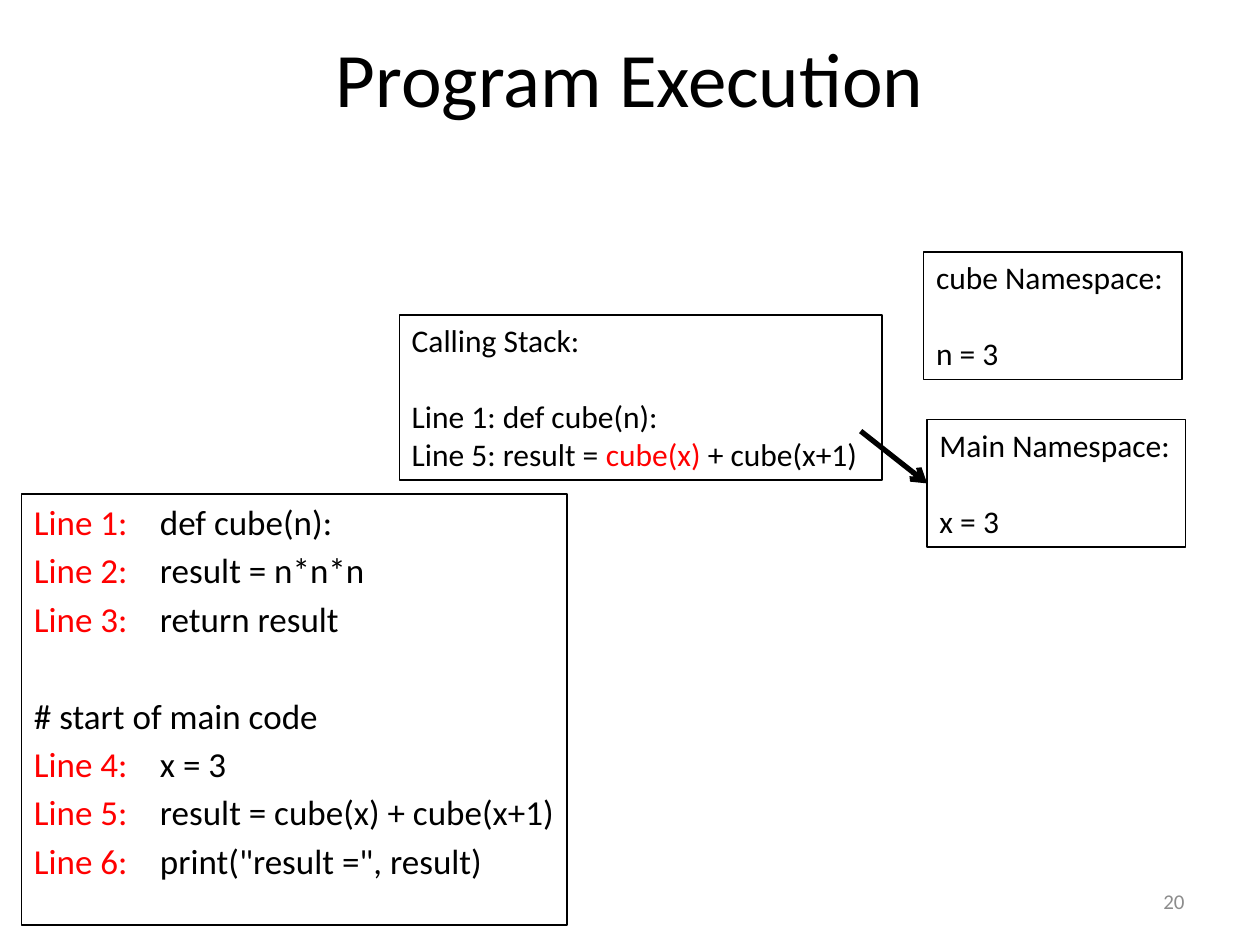
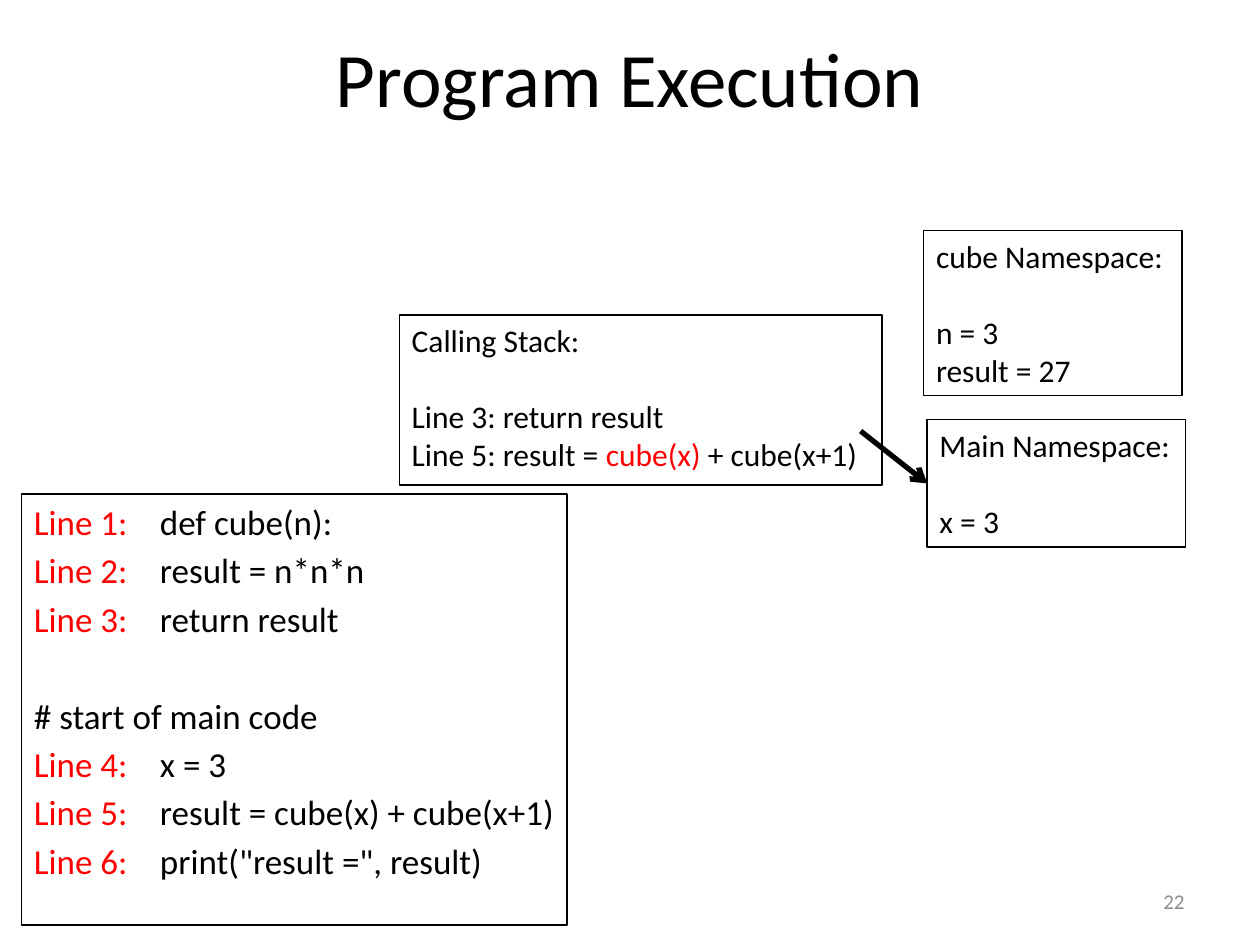
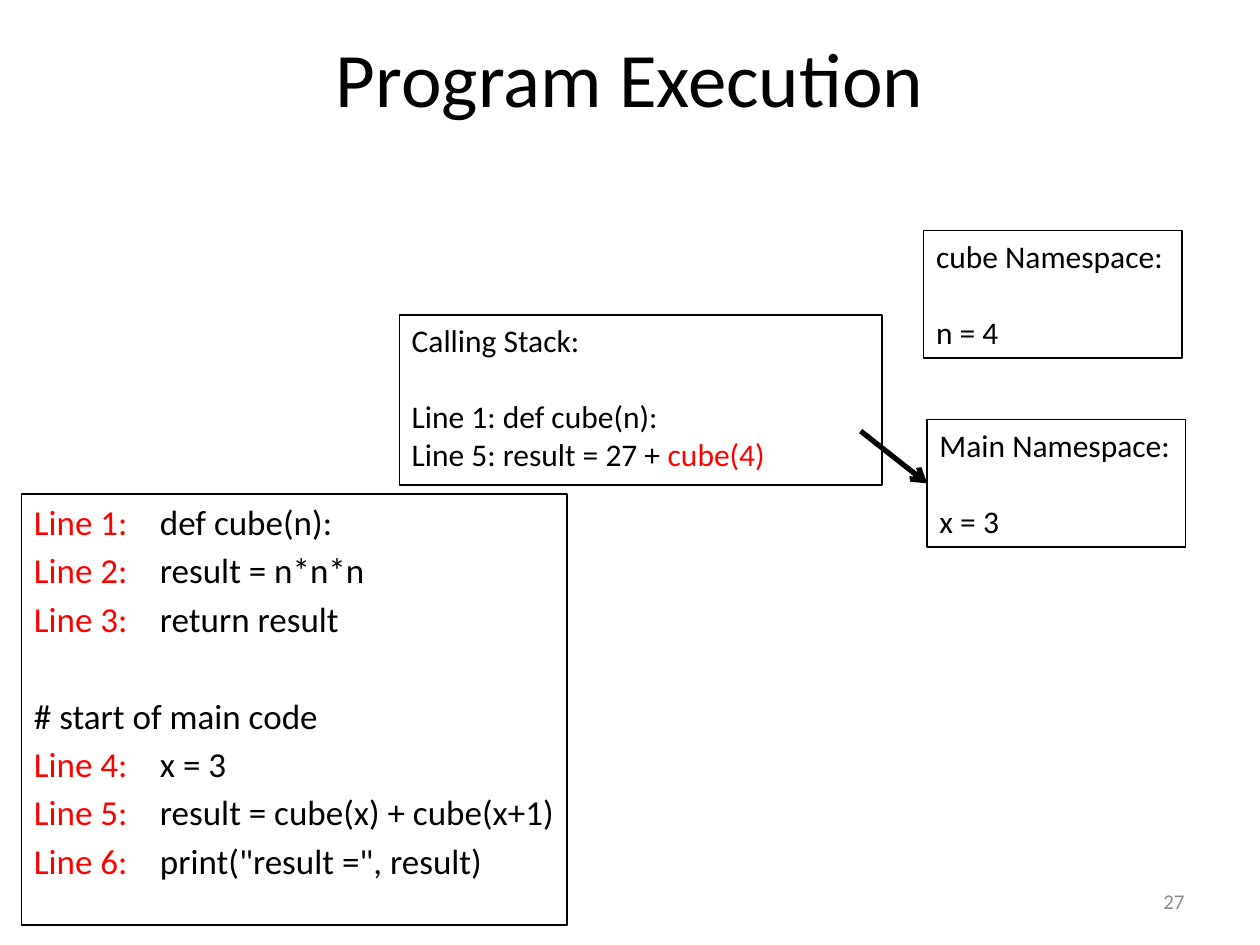
"""Build three slides that trace a small program's calling stack and namespaces."""
from dataclasses import dataclass

from lxml.etree import SubElement
from pptx import Presentation
from pptx.dml.color import RGBColor
from pptx.enum.shapes import MSO_CONNECTOR
from pptx.enum.text import MSO_ANCHOR, MSO_AUTO_SIZE, PP_ALIGN
from pptx.oxml.ns import qn
from pptx.shapes.autoshape import Shape
from pptx.slide import Slide
from pptx.text.text import TextFrame, _Paragraph as Paragraph
from pptx.util import Cm, Length, Pt

BLACK = RGBColor(0x00, 0x00, 0x00)
RED = RGBColor(0xFF, 0x00, 0x00)
GREY = RGBColor(0x8C, 0x8C, 0x8C)
FONT = "Calibri"
TITLE = "Program Execution"
LEFT_ALIGN = PP_ALIGN.LEFT
LINE_GAP = Pt(3.6)
CODE_BREAK = Pt(31.6)
BOX_BREAK = Pt(22)
CODE_TAB = Cm(2.36)
NESTED_TAB = Cm(2.84)


@dataclass(frozen=True)
class Span:
    """A piece of text in one colour."""
    text: str
    color: RGBColor = BLACK


@dataclass(frozen=True)
class CodeLine:
    """A line of the program, with its label and the tab stop of its code."""
    label: str
    code: str
    tab: Length = CODE_TAB
    before: Length = LINE_GAP


@dataclass(frozen=True)
class Area:
    """A rectangle on the page, in centimetres."""
    left: float
    top: float
    width: float
    height: float

    def lengths(self) -> tuple[Length, Length, Length, Length]:
        """Return the four measures as lengths."""
        return Cm(self.left), Cm(self.top), Cm(self.width), Cm(self.height)


@dataclass(frozen=True)
class Step:
    """The state of the program that one slide shows."""
    number: str
    stack: list[list[Span]]
    stack_height: float
    cube: list[list[Span]]
    cube_top: float
    cube_height: float


TITLE_AREA = Area(1.27, 0.43, 22.86, 2.24)
CODE_AREA = Area(0.43, 9.96, 11, 8.69)
NUMBER_AREA = Area(18.21, 17.65, 5.92, 1.02)
MAIN_AREA = Area(18.69, 8.46, 5.21, 2.57)

PROGRAM = [
    CodeLine("Line 1:", "def cube(n):"),
    CodeLine("Line 2:", "result = n*n*n", NESTED_TAB),
    CodeLine("Line 3:", "return result", NESTED_TAB),
    CodeLine("", "# start of main code", before=CODE_BREAK),
    CodeLine("Line 4:", "x = 3"),
    CodeLine("Line 5:", "result = cube(x) + cube(x+1)"),
    CodeLine("Line 6:", 'print("result =", result)'),
]

DEFINITION = [Span("Line 1: def cube(n):")]
FIRST_CALL = [Span("Line 5: result = "), Span("cube(x) ", RED), Span("+ cube(x+1)")]
SECOND_CALL = [Span("Line 5: result = 27 + "), Span("cube(4)", RED)]

STEPS = [
    Step("20", [DEFINITION, FIRST_CALL], 3.33, [[Span("n = 3")]], 5.08, 2.57),
    Step("22", [[Span("Line 3: return result")], FIRST_CALL], 3.43,
         [[Span("n = 3")], [Span("result = 27")]], 4.65, 3.33),
    Step("27", [DEFINITION, SECOND_CALL], 3.43, [[Span("n = 4")]], 4.65, 2.57),
]


def place(shape: Shape, area: Area) -> None:
    """Move a placeholder to an area."""
    shape.left, shape.top, shape.width, shape.height = area.lengths()


def outline(shape: Shape) -> None:
    """Give a box its thin black border."""
    shape.line.color.rgb = BLACK
    shape.line.width = Pt(0.75)


def set_frame(frame: TextFrame, anchor: MSO_ANCHOR) -> None:
    """Make a text frame wrap at a fixed size."""
    frame.word_wrap = True
    frame.auto_size = MSO_AUTO_SIZE.NONE
    frame.vertical_anchor = anchor


def write(para: Paragraph, spans: list[Span], size: float,
          align: PP_ALIGN = LEFT_ALIGN) -> None:
    """Fill a paragraph with coloured spans."""
    para.alignment = align
    para.font.name = FONT
    para.font.size = Pt(size)
    para.font.color.rgb = spans[0].color
    for span in spans:
        run = para.add_run()
        run.text = span.text
        if len(spans) > 1:
            run.font.color.rgb = span.color


def next_paragraph(frame: TextFrame, index: int) -> Paragraph:
    """Return the first paragraph, or add another."""
    return frame.add_paragraph() if index else frame.paragraphs[0]


def set_tab(para: Paragraph, position: Length) -> None:
    """Remove bullet and indent and set one tab stop."""
    properties = para._p.get_or_add_pPr()
    properties.set("marL", "0")
    properties.set("indent", "0")
    SubElement(properties, qn("a:buNone"))
    stops = SubElement(properties, qn("a:tabLst"))
    SubElement(stops, qn("a:tab"), pos=str(int(position)), algn="l")


def add_program(page: Slide) -> None:
    """Write the program listing in the body placeholder."""
    body = page.placeholders[1]
    place(body, CODE_AREA)
    outline(body)
    frame = body.text_frame
    set_frame(frame, MSO_ANCHOR.TOP)
    for index, line in enumerate(PROGRAM):
        para = next_paragraph(frame, index)
        para.space_before = line.before
        set_tab(para, line.tab)
        code = Span(line.code)
        spans = [Span(line.label + "\t", RED), code] if line.label else [code]
        write(para, spans, 20)


def add_state_box(page: Slide, area: Area, heading: str,
                  lines: list[list[Span]]) -> Shape:
    """Draw a bordered box with a heading above its lines."""
    box = page.shapes.add_textbox(*area.lengths())
    outline(box)
    set_frame(box.text_frame, MSO_ANCHOR.TOP)
    for index, spans in enumerate([[Span(heading)], *lines]):
        para = next_paragraph(box.text_frame, index)
        para.space_before = BOX_BREAK if index == 1 else Pt(0)
        write(para, spans, 18)
    return box


def add_arrow(page: Slide, target: Shape) -> None:
    """Point from the stack to the left side of a namespace."""
    start = Cm(17.35), Cm(8.69)
    arrow = page.shapes.add_connector(MSO_CONNECTOR.STRAIGHT, *start, *start)
    arrow.end_connect(target, 1)
    arrow.line.color.rgb = BLACK
    arrow.line.width = Pt(3)
    SubElement(arrow.line._get_or_add_ln(), qn("a:tailEnd"), type="arrow")
    SubElement(arrow._element.spPr, qn("a:effectLst"))


def add_page(deck: Presentation, step: Step) -> None:
    """Add the slide of one step."""
    page = deck.slides.add_slide(deck.slide_layouts[1])
    title = page.shapes.title
    place(title, TITLE_AREA)
    set_frame(title.text_frame, MSO_ANCHOR.MIDDLE)
    write(title.text_frame.paragraphs[0], [Span(TITLE)], 44, PP_ALIGN.CENTER)
    add_program(page)

    number = page.shapes.add_textbox(*NUMBER_AREA.lengths())
    set_frame(number.text_frame, MSO_ANCHOR.MIDDLE)
    write(number.text_frame.paragraphs[0], [Span(step.number, GREY)], 12, PP_ALIGN.RIGHT)

    main_box = add_state_box(page, MAIN_AREA, "Main Namespace:", [[Span("x = 3")]])
    stack_area = Area(8.05, 6.35, 9.73, step.stack_height)
    add_state_box(page, stack_area, "Calling Stack:", step.stack)
    add_arrow(page, main_box)
    cube_area = Area(18.62, step.cube_top, 5.21, step.cube_height)
    add_state_box(page, cube_area, "cube Namespace:", step.cube)


def main() -> None:
    """Build and save the deck."""
    deck = Presentation()
    deck.slide_width, deck.slide_height = Cm(25.4), Cm(19.05)
    for step in STEPS:
        add_page(deck, step)
    deck.save("out.pptx")


if __name__ == "__main__":
    main()
